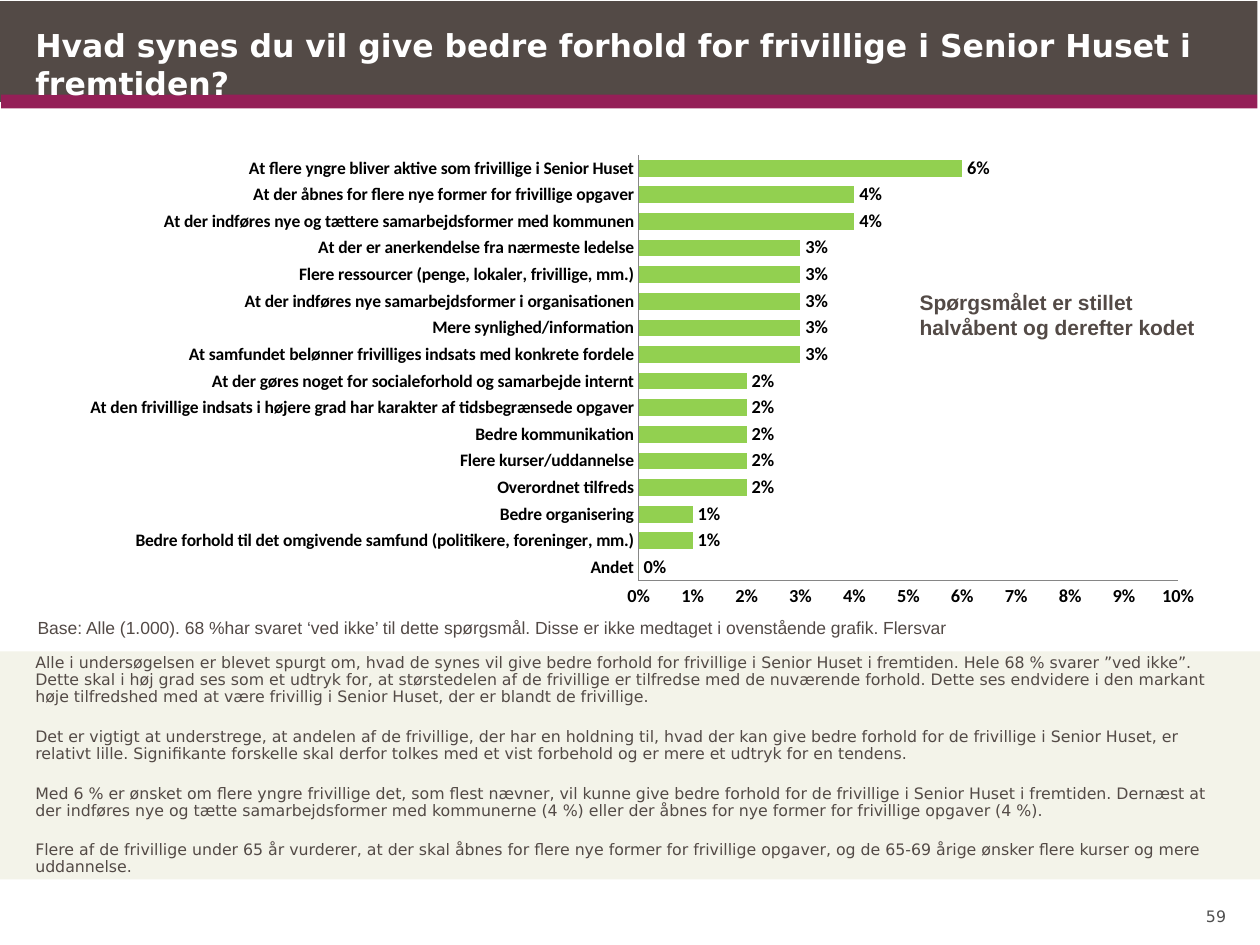
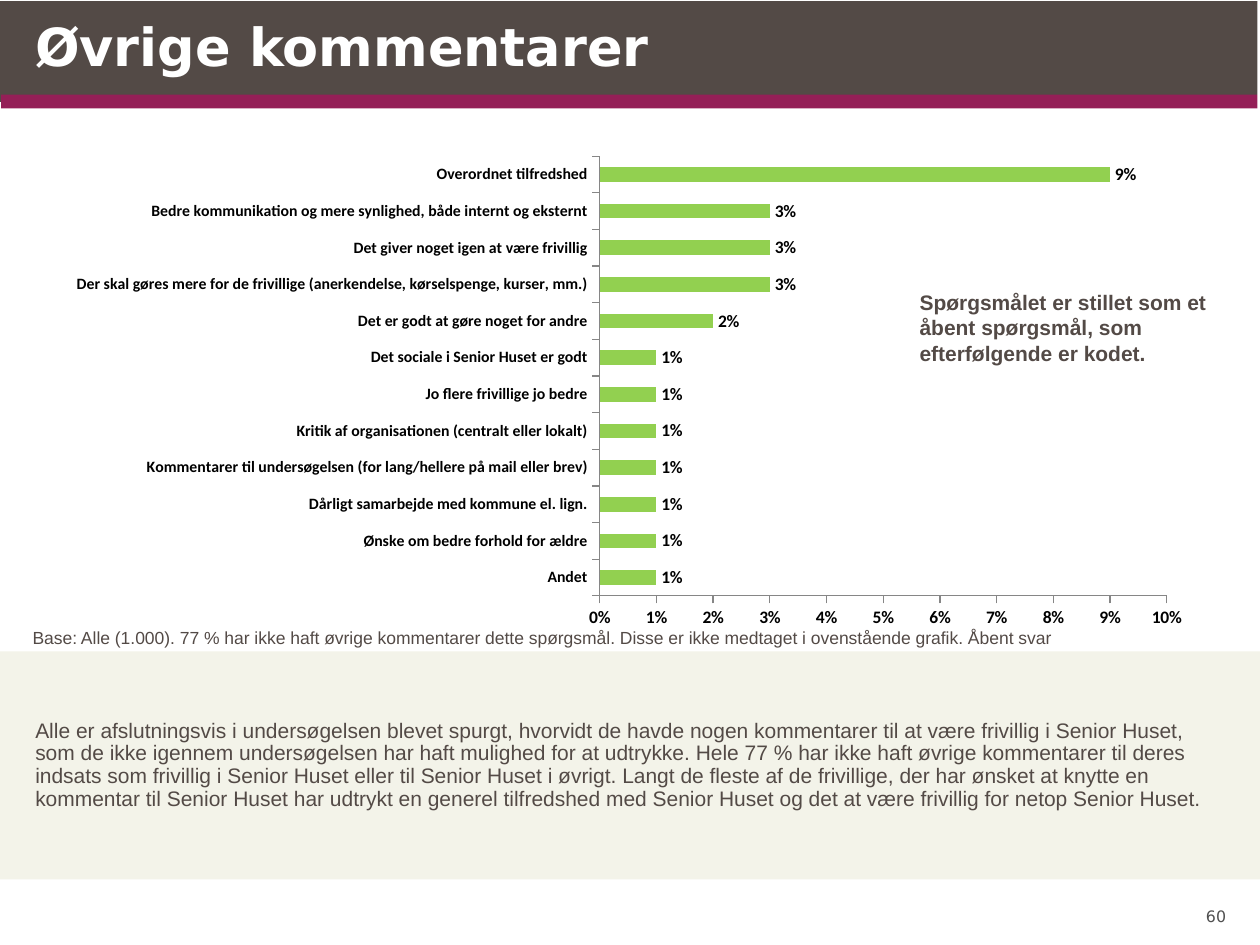
"""Build two survey slides with bar charts and comments."""
from lxml import etree
from pptx import Presentation
from pptx import util as u
from pptx.chart import data as cd
from pptx.dml import color as dc
from pptx.enum import chart as ec
from pptx.enum import shapes, text

BROWN, PLUM, SAND, WHITE = "534A46", "941F57", "F3F3E9", "FFFFFF"
GREY, GREEN, BLACK, LINE = "505050", "92D050", "000000", "868686"
SANS, ARIAL = "DejaVu Sans", "Arial"
BANDS = [
    ((0, 0.01, 10, 0.8), BROWN),
    ((0.01, 0.75, 9.98, 0.11), PLUM),
    ((9.98, 0, 0.02, 7.5), WHITE),
    ((0, 7.48, 10, 0.02), WHITE),
    ((0, 5.17, 10, 1.81), SAND),
]
CHART = (0.27, 1.15, 9.45, 3.86)
NS = "http://schemas.openxmlformats.org/drawingml/2006/chart"

FIRST = {
    "page": "59",
    "title": "Hvad synes du vil give bedre forhold for frivillige i Senior Huset i fremtiden?",
    "head": ((0.28, 0.21, 9.45, 0.61), 18),
    "body": [
        "Alle i undersøgelsen er blevet spurgt om, hvad de synes vil give bedre forhold for "
        "frivillige i Senior Huset i fremtiden. Hele 68 % svarer ”ved ikke”. Dette skal i høj grad "
        "ses som et udtryk for, at størstedelen af de frivillige er tilfredse med de nuværende "
        "forhold. Dette ses endvidere i den markant høje tilfredshed med at være frivillig i "
        "Senior Huset, der er blandt de frivillige.",
        "Det er vigtigt at understrege, at andelen af de frivillige, der har en holdning til, hvad "
        "der kan give bedre forhold for de frivillige i Senior Huset, er relativt lille. "
        "Signifikante forskelle skal derfor tolkes med et vist forbehold og er mere et udtryk for "
        "en tendens.",
        "Med 6 % er ønsket om flere yngre frivillige det, som flest nævner, vil kunne give bedre "
        "forhold for de frivillige i Senior Huset i fremtiden. Dernæst at der indføres nye og tætte "
        "samarbejdsformer med kommunerne (4 %) eller der åbnes for nye former for frivillige "
        "opgaver (4 %).",
        "Flere af de frivillige under 65 år vurderer, at der skal åbnes for flere nye former for "
        "frivillige opgaver, og de 65-69 årige ønsker flere kurser og mere uddannelse.",
    ],
    "type": (9, SANS),
    "base": ((0.2, 4.85, 8.35, 0.44),
             "Base: Alle (1.000). 68 %har svaret ‘ved ikke’ til dette spørgsmål. "
             "Disse er ikke medtaget i ovenstående grafik. Flersvar"),
    "note": ((7.2, 2.25, 2.68, 0.5), "Spørgsmålet er stillet halvåbent og derefter kodet"),
    "bars": [
        ("Andet", 0),
        ("Bedre forhold til det omgivende samfund (politikere, foreninger, mm.)", 0.01),
        ("Bedre organisering", 0.01),
        ("Overordnet tilfreds", 0.02),
        ("Flere kurser/uddannelse", 0.02),
        ("Bedre kommunikation", 0.02),
        ("At den frivillige indsats i højere grad har karakter af tidsbegrænsede opgaver", 0.02),
        ("At der gøres noget for socialeforhold og samarbejde internt", 0.02),
        ("At samfundet belønner frivilliges indsats med konkrete fordele", 0.03),
        ("Mere synlighed/information", 0.03),
        ("At der indføres nye samarbejdsformer i organisationen", 0.03),
        ("Flere ressourcer (penge, lokaler, frivillige, mm.)", 0.03),
        ("At der er anerkendelse fra nærmeste ledelse", 0.03),
        ("At der indføres nye og tættere samarbejdsformer med kommunen", 0.04),
        ("At der åbnes for flere nye former for frivillige opgaver", 0.04),
        ("At flere yngre bliver aktive som frivillige i Senior Huset", 0.06),
    ],
    "plot": {"gap_width": 59, "overlap": -45},
    "area": (4.8, 0.08, 4.28, 3.38),
    "sizes": (10, 10.5),
    "tick": ec.XL_TICK_MARK.NONE,
}
SECOND = {
    "page": "60",
    "title": "Øvrige kommentarer",
    "head": ((0.28, 0.11, 9.45, 0.71), 30),
    "body": [
        "Alle er afslutningsvis i undersøgelsen blevet spurgt, hvorvidt de havde nogen kommentarer "
        "til at være frivillig i Senior Huset, som de ikke igennem undersøgelsen har haft mulighed "
        "for at udtrykke. Hele 77 % har ikke haft øvrige kommentarer til deres indsats som "
        "frivillig i Senior Huset eller til Senior Huset i øvrigt. Langt de fleste af de "
        "frivillige, der har ønsket at knytte en kommentar til Senior Huset har udtrykt en generel "
        "tilfredshed med Senior Huset og det at være frivillig for netop Senior Huset.",
    ],
    "type": (12, ARIAL),
    "base": ((0.16, 4.93, 8.41, 0.44),
             "Base: Alle (1.000). 77 % har ikke haft øvrige kommentarer dette spørgsmål. "
             "Disse er ikke medtaget i ovenstående grafik. Åbent svar"),
    "note": ((7.2, 2.25, 2.8, 0.71),
             "Spørgsmålet er stillet som et åbent spørgsmål, som efterfølgende er kodet."),
    "bars": [
        ("Andet", 0.01),
        ("Ønske om bedre forhold for ældre", 0.01),
        ("Dårligt samarbejde med kommune el. lign.", 0.01),
        ("Kommentarer til undersøgelsen (for lang/hellere på mail eller brev)", 0.01),
        ("Kritik af organisationen (centralt eller lokalt)", 0.01),
        ("Jo flere frivillige jo bedre", 0.01),
        ("Det sociale i Senior Huset er godt", 0.01),
        ("Det er godt at gøre noget for andre", 0.02),
        ("Der skal gøres mere for de frivillige (anerkendelse, kørselspenge, kurser, mm.)", 0.03),
        ("Det giver noget igen at være frivillig", 0.03),
        ("Bedre kommunikation og mere synlighed, både internt og eksternt", 0.03),
        ("Overordnet tilfredshed", 0.09),
    ],
    "plot": {"gap_width": 150},
    "area": (4.49, 0.09, 4.5, 3.49),
    "sizes": (9, 10),
    "tick": ec.XL_TICK_MARK.OUTSIDE,
}


def rgb(code):
    """Turn a hex string into a colour."""
    return dc.RGBColor.from_string(code)


def apply(thing, form):
    """Set each attribute named in the dict."""
    for name, value in form.items():
        setattr(thing, name, value)


def style(font, size, face, shade, bold=False):
    """Format a font."""
    apply(font, {"size": u.Pt(size), "name": face, "bold": bold})
    font.color.rgb = rgb(shade)


def place(shape, box):
    """Move and size a shape in inches."""
    apply(shape, dict(zip(("left", "top", "width", "height"), map(u.Inches, box))))


def paint(page):
    """Put the shared bands on the layout of the slide."""
    tree = page.slide_layout.shapes.element
    for box, shade in BANDS:
        band = page.shapes.add_shape(shapes.MSO_SHAPE.RECTANGLE, *map(u.Inches, box))
        band.shadow.inherit = False
        band.fill.solid()
        band.fill.fore_color.rgb = rgb(shade)
        band.line.fill.background()
        tree.append(band.element)


def flatten(props):
    """Remove bullet and indent from a paragraph."""
    props.set("marL", "0")
    props.set("indent", "0")
    etree.SubElement(props, "{http://schemas.openxmlformats.org/drawingml/2006/main}buNone")


def write(shape, lines, font, anchor="TOP", align="LEFT", inset=0, form=None):
    """Fill a shape with formatted paragraphs."""
    frame = shape.text_frame
    frame.text = "\n".join(lines)
    apply(frame, {"word_wrap": True, "auto_size": text.MSO_AUTO_SIZE.NONE,
                  "vertical_anchor": text.MSO_ANCHOR[anchor]})
    apply(frame, {f"margin_{side}": u.Inches(inset) for side in ("left", "right")})
    apply(frame, {f"margin_{side}": u.Inches(inset / 2) for side in ("top", "bottom")})
    for rank, para in enumerate(frame.paragraphs):
        if shape.is_placeholder:
            flatten(para._p.get_or_add_pPr())
        apply(para, {"alignment": text.PP_ALIGN[align],
                     "space_before": u.Pt(13 if rank else 0), **(form or {})})
        for run in para.runs:
            style(run.font, *font)


def label(page, box, words, font, **rest):
    """Add a text box."""
    write(page.shapes.add_textbox(*map(u.Inches, box)), [words], font, **rest)


def fix(chart, area):
    """Place the inner plot area, given in inches within the chart."""
    plot = chart.element.find(f".//{{{NS}}}plotArea")
    for old in plot.findall(f"{{{NS}}}layout"):
        plot.remove(old)
    layout = etree.Element(f"{{{NS}}}layout")
    manual = etree.SubElement(layout, f"{{{NS}}}manualLayout")
    shares = [part / whole for part, whole in zip(area, CHART[2:] * 2)]
    pairs = [("layoutTarget", "inner"), ("xMode", "edge"), ("yMode", "edge"),
             *zip("xywh", shares)]
    for tag, value in pairs:
        etree.SubElement(manual, f"{{{NS}}}{tag}").set("val", str(value))
    plot.insert(0, layout)


def graph(page, spec):
    """Add the bar chart."""
    data = cd.CategoryChartData(number_format="0%")
    names, values = zip(*spec["bars"])
    data.categories = names
    data.add_series("Series 1", values)
    box = map(u.Inches, CHART)
    chart = page.shapes.add_chart(ec.XL_CHART_TYPE.BAR_CLUSTERED, *box, data).chart
    apply(chart, {"has_legend": False, "has_title": False})
    style(chart.font, 10, "Calibri", BLACK)
    axes = (chart.category_axis, chart.value_axis)
    for axis, size in zip(axes, spec["sizes"]):
        apply(axis, {"has_major_gridlines": False, "major_tick_mark": spec["tick"],
                     "minor_tick_mark": ec.XL_TICK_MARK.NONE})
        style(axis.tick_labels.font, size, "Calibri", BLACK, True)
        axis.format.line.color.rgb = rgb(LINE)
        axis.format.line.width = u.Pt(0.75)
    apply(axes[1], {"minimum_scale": 0, "maximum_scale": 0.1, "major_unit": 0.01})
    number = {"number_format": "0%", "number_format_is_linked": False}
    apply(axes[1].tick_labels, number)
    plot = chart.plots[0]
    apply(plot, {"vary_by_categories": False, "has_data_labels": True, **spec["plot"]})
    apply(plot.data_labels, {"show_value": True, **number,
                             "position": ec.XL_LABEL_POSITION.OUTSIDE_END})
    style(plot.data_labels.font, spec["sizes"][1], "Calibri", BLACK, True)
    fill = plot.series[0].format.fill
    fill.solid()
    fill.fore_color.rgb = rgb(GREEN)
    fix(chart, spec["area"])


def build(page, spec):
    """Fill one slide."""
    label(page, (9.34, 6.94, 0.39, 0.41), spec["page"], (9, SANS, GREY),
          anchor="BOTTOM", align="RIGHT")
    head, body = page.shapes.title, page.placeholders[1]
    box, size = spec["head"]
    place(head, box)
    write(head, [spec["title"]], (size, SANS, WHITE, True))
    place(body, (0.28, 5.17, 9.45, 1.81))
    write(body, spec["body"], (*spec["type"], BROWN), anchor="MIDDLE",
          form={"line_spacing": 0.9})
    label(page, *spec["base"], (10, ARIAL, BROWN), inset=0.1)
    graph(page, spec)
    label(page, *spec["note"], (12, ARIAL, BROWN, True), inset=0.1)


def main():
    """Create and save the deck."""
    deck = Presentation()
    apply(deck, {"slide_width": u.Inches(10), "slide_height": u.Inches(7.5)})
    pages = [deck.slides.add_slide(deck.slide_layouts[1]) for _ in range(2)]
    paint(pages[0])
    for page, spec in zip(pages, (FIRST, SECOND)):
        build(page, spec)
    deck.save("out.pptx")


if __name__ == "__main__":
    main()
